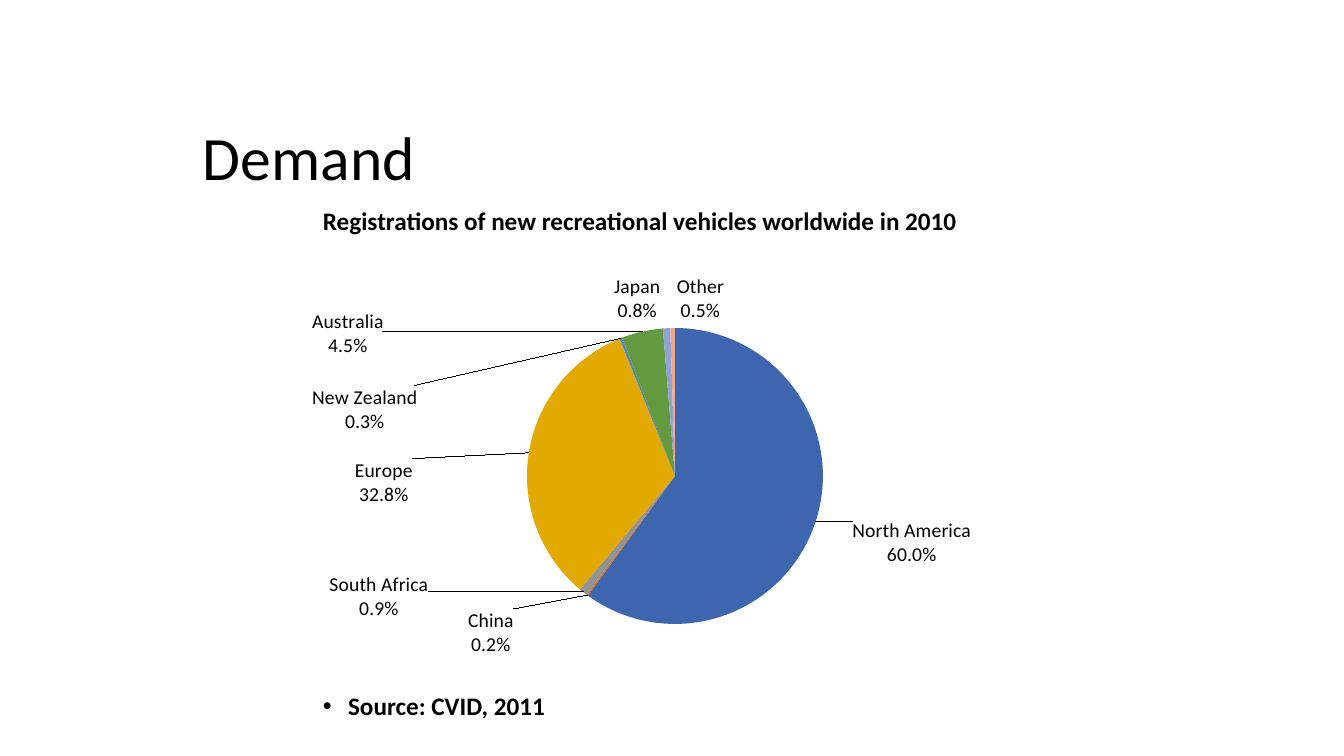
from copy import deepcopy

from lxml import etree
from pptx import Presentation
from pptx import util as u
from pptx.chart.data import CategoryChartData
from pptx.dml.color import RGBColor
from pptx.enum import chart as ch, text
from pptx.oxml import ns

TITLE = "Demand"
HEADING = "Registrations of new recreational vehicles worldwide in 2010"
SOURCE = "Source: CVID, 2011"

# region, share, slice colour, label shift in px from its outside-end place
REGIONS = [
    ("North America", 60, "3D66AF", (31, -5)),
    ("China", 0.2, "D3702B", (-70, 9)),
    ("South Africa", 0.9, "939393", (-151, -24)),
    ("Europe", 32.8, "E2AA00", (-110, 55)),
    ("New Zealand", 0.3, "5089BC", (-204, 101)),
    ("Australia", 4.5, "639A3F", (-258, 32)),
    ("Japan", 0.8, "8FA2D4", (-29, 1)),
    ("Other", 0.5, "F1A78A", (28, 1)),
]

THEME = {"font": "Calibri", "ink": "000000", "title": 44, "body": 18, "label": 14}

SLIDE = (1344, 756)
BOXES = {
    "title": (193, 137, 1058, 48),
    "heading": (313, 200, 793, 40),
    "source": (313, 689, 793, 40),
    "chart": (312, 260, 775, 414),
}
PIE = (215, 68, 296, 296)  # inside the chart


def px(n):
    return u.Emu(round(n * 914400 / 100.8))


def set_font(font, size, bold=False):
    for key, value in {"name": THEME["font"], "size": u.Pt(size), "bold": bold}.items():
        setattr(font, key, value)
    font.color.rgb = RGBColor.from_string(THEME["ink"])


def add_text(slide, box, words, size, bold=False, anchor=text.MSO_ANCHOR.TOP,
             bullet=False, **spacing):
    tf = slide.shapes.add_textbox(*map(px, BOXES[box])).text_frame
    tf.word_wrap = True
    tf.vertical_anchor = anchor
    p = tf.paragraphs[0]
    for key, value in spacing.items():
        setattr(p, key, value)
    if bullet:
        pPr = p._p.get_or_add_pPr()
        pPr.set("marL", str(u.Inches(0.25)))
        pPr.set("indent", str(-u.Inches(0.25)))
        etree.SubElement(pPr, ns.qn("a:buFont")).set("typeface", "Arial")
        etree.SubElement(pPr, ns.qn("a:buChar")).set("char", "•")
    r = p.add_run()
    r.text = words
    set_font(r.font, size, bold)


def manual_layout(**values):
    layout = etree.Element(ns.qn("c:layout"))
    manual = etree.SubElement(layout, ns.qn("c:manualLayout"))
    for key, value in values.items():
        etree.SubElement(manual, ns.qn("c:" + key)).set("val", str(value))
    return layout


def shift_labels(dLbls, width, height):
    """Give each label its own entry, formatted like the series labels."""
    shared = [e for e in dLbls if e.tag != ns.qn("c:showLeaderLines")]
    for i, (_, _, _, (dx, dy)) in enumerate(REGIONS):
        dLbl = etree.Element(ns.qn("c:dLbl"))
        etree.SubElement(dLbl, ns.qn("c:idx")).set("val", str(i))
        dLbl.append(manual_layout(x=round(dx / width, 4), y=round(dy / height, 4)))
        dLbl.extend(deepcopy(shared))
        dLbls.insert(i, dLbl)


def add_pie(slide):
    data = CategoryChartData()
    data.categories = [row[0] for row in REGIONS]
    data.add_series("Series 1", [row[1] for row in REGIONS])
    chart = slide.shapes.add_chart(
        ch.XL_CHART_TYPE.PIE, *map(px, BOXES["chart"]), data).chart
    chart.has_legend = chart.has_title = False
    set_font(chart.font, THEME["body"])
    plot = chart.plots[0]
    plot.vary_by_categories = True
    series = plot.series[0]
    for i, row in enumerate(REGIONS):
        fill = series.points[i].format.fill
        fill.solid()
        fill.fore_color.rgb = RGBColor.from_string(row[2])

    labels = series.data_labels
    for key, value in {
        "show_value": False, "show_percentage": True, "show_category_name": True,
        "number_format": "0.0%", "number_format_is_linked": False,
        "position": ch.XL_LABEL_POSITION.OUTSIDE_END,
    }.items():
        setattr(labels, key, value)
    set_font(labels.font, THEME["label"])
    dLbls = labels._element
    separator = etree.Element(ns.qn("c:separator"))
    separator.text = "\n"
    last_flag = dLbls.find(ns.qn("c:showBubbleSize"))
    if last_flag is None:
        last_flag = dLbls.find(ns.qn("c:showPercent"))
    last_flag.addnext(separator)
    width, height = BOXES["chart"][2:]
    shift_labels(dLbls, width, height)

    area = chart._chartSpace.find(".//" + ns.qn("c:plotArea"))
    for old in area.findall(ns.qn("c:layout")):
        area.remove(old)
    x, y, w, h = PIE
    area.insert(0, manual_layout(
        layoutTarget="inner", xMode="edge", yMode="edge",
        x=round(x / width, 4), y=round(y / height, 4),
        w=round(w / width, 4), h=round(h / height, 4)))


def main():
    prs = Presentation()
    prs.slide_width, prs.slide_height = map(px, SLIDE)
    slide = prs.slides.add_slide(prs.slide_layouts[6])
    add_text(slide, "source", SOURCE, THEME["body"], bold=True, bullet=True,
             line_spacing=0.9)
    add_text(slide, "title", TITLE, THEME["title"], anchor=text.MSO_ANCHOR.MIDDLE,
             line_spacing=0.9)
    add_text(slide, "heading", HEADING, THEME["body"], bold=True,
             space_after=u.Pt(3))
    add_pie(slide)
    prs.save("out.pptx")


if __name__ == "__main__":
    main()
